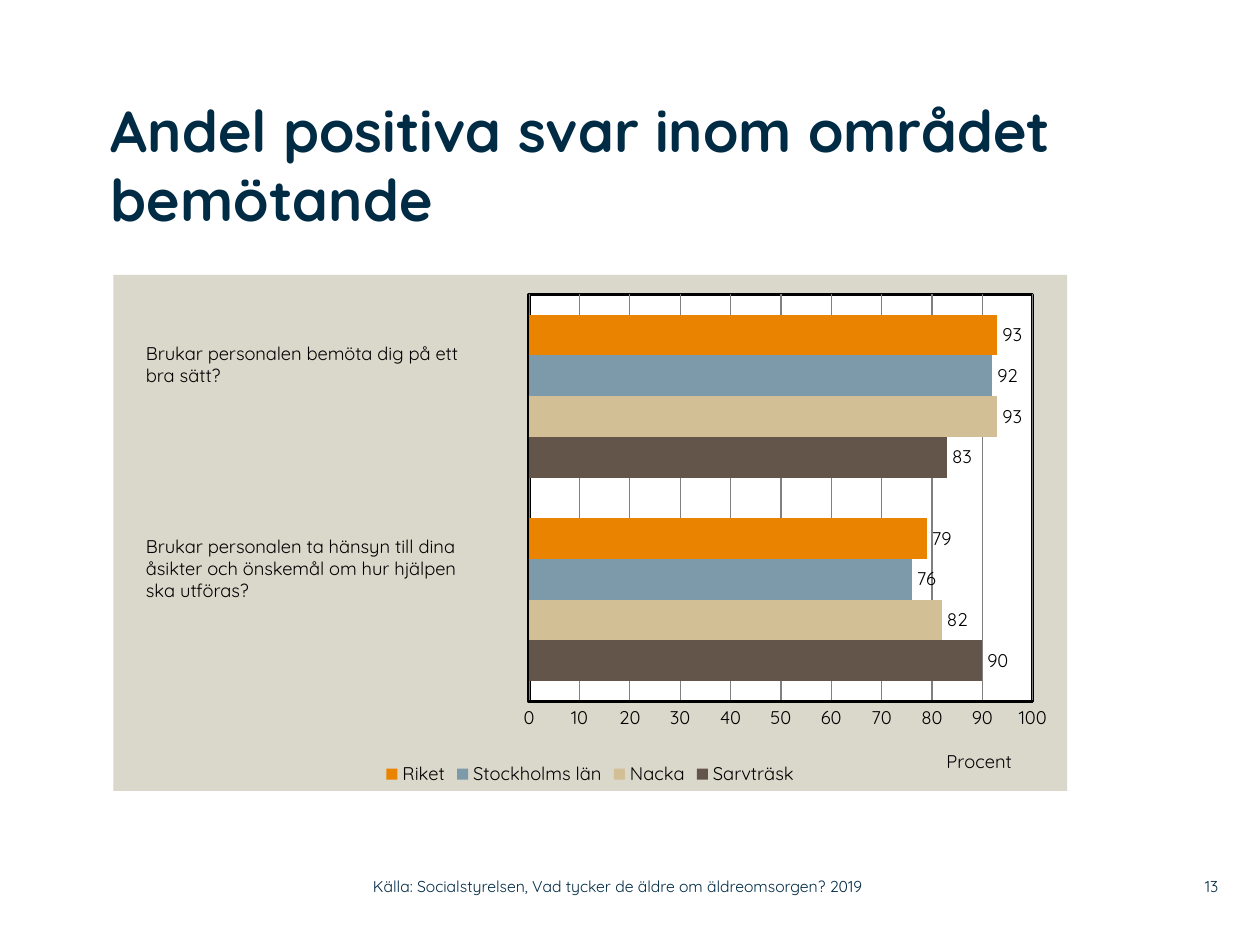
from pptx import Presentation
from pptx.chart.data import CategoryChartData
from pptx.dml.color import RGBColor
from pptx.enum.chart import XL_CHART_TYPE, XL_LABEL_POSITION, XL_LEGEND_POSITION, XL_TICK_MARK
from pptx.enum.text import MSO_ANCHOR, MSO_AUTO_SIZE, PP_ALIGN
from pptx.oxml import parse_xml
from pptx.oxml.ns import nsdecls, qn
from pptx.util import Pt

NAVY = RGBColor(0x00, 0x2B, 0x45)
BLACK = RGBColor(0, 0, 0)
GRAY = RGBColor(0x80, 0x80, 0x80)
BROWN = RGBColor(0x63, 0x55, 0x49)
SAND = RGBColor(0xD3, 0xBF, 0x96)
BLUE = RGBColor(0x7D, 0x9A, 0xAA)
ORANGE = RGBColor(0xE9, 0x83, 0x00)
FONT = "Quicksand"

prs = Presentation()
prs.slide_width, prs.slide_height = Pt(720), Pt(540)
slide = prs.slides.add_slide(prs.slide_layouts[6])


def add_text(text, left, top, width, height, size=10.5, color=BLACK, bold=False,
             align=PP_ALIGN.LEFT, anchor=MSO_ANCHOR.TOP, inset=(0, 0), grow=False):
    box = slide.shapes.add_textbox(Pt(left), Pt(top), Pt(width), Pt(height))
    frame = box.text_frame
    frame.word_wrap = True
    frame.auto_size = MSO_AUTO_SIZE.SHAPE_TO_FIT_TEXT if grow else MSO_AUTO_SIZE.NONE
    frame.vertical_anchor = anchor
    frame.margin_left = frame.margin_right = Pt(inset[0])
    frame.margin_top = frame.margin_bottom = Pt(inset[1])
    frame.text = text
    for para in frame.paragraphs:
        para.alignment = align
        font = para.font
        font.name, font.size, font.bold = FONT, Pt(size), bold
        font.color.rgb = color


def set_layout(parent, index, inner="", **values):
    for old in parent.findall(qn("c:layout")):
        parent.remove(old)
    parts = "".join(f'<c:{key} val="{val}"/>' for key, val in values.items())
    parent.insert(index, parse_xml(
        f'<c:layout {nsdecls("c")}><c:manualLayout>{inner}<c:xMode val="edge"/>'
        f'<c:yMode val="edge"/>{parts}</c:manualLayout></c:layout>'))


# Chart data, from the lowest bar up
rows = [
    ("Sarvträsk", (90, 83), BROWN),
    ("Nacka", (82, 93), SAND),
    ("Stockholms län", (76, 92), BLUE),
    ("Riket", (79, 93), ORANGE),
]
data = CategoryChartData()
data.categories = ["1", "2"]
for name, vals, _ in rows:
    data.add_series(name, vals)
chart = slide.shapes.add_chart(XL_CHART_TYPE.BAR_CLUSTERED, Pt(64.8), Pt(157),
                               Pt(545), Pt(295), data).chart
chart.has_title = False
chart.font.name, chart.font.size = FONT, Pt(10.5)
chart.font.color.rgb = BLACK

# Bars and their labels
plot = chart.plots[0]
plot.gap_width, plot.overlap = 100, 0
plot.vary_by_categories = False
for bars, (_, _, color) in zip(plot.series, rows):
    bars.format.fill.solid()
    bars.format.fill.fore_color.rgb = color
    labels = bars.data_labels
    labels.show_value = True
    labels.position = XL_LABEL_POSITION.OUTSIDE_END
    labels.font.name, labels.font.size = FONT, Pt(10.5)

# Axes
chart.category_axis.visible = False
axis = chart.value_axis
axis.minimum_scale, axis.maximum_scale, axis.major_unit = 0, 100, 10
axis.major_tick_mark = axis.minor_tick_mark = XL_TICK_MARK.NONE
axis.format.line.color.rgb = BLACK
axis.format.line.width = Pt(2)
axis.has_major_gridlines = True
axis.major_gridlines.format.line.color.rgb = GRAY
axis.major_gridlines.format.line.width = Pt(0.75)
title = axis.axis_title
title.text_frame.text = "Procent"
font = title.text_frame.paragraphs[0].runs[0].font
font.name, font.size, font.bold = FONT, Pt(10.5), False
font.color.rgb = BLACK
set_layout(title._element, 1, x=0.87, y=0.91)

# Legend
chart.has_legend = True
chart.legend.position = XL_LEGEND_POSITION.BOTTOM
chart.legend.include_in_layout = False
chart.legend.font.name, chart.legend.font.size = FONT, Pt(10.5)

# Plot frame and chart backdrop
root = chart.element.find(qn("c:chart"))
area = root.find(qn("c:plotArea"))
set_layout(area, 0, '<c:layoutTarget val="inner"/>', x=0.436, y=0.038, w=0.528, h=0.789)
fill = '<a:solidFill><a:srgbClr val="{}"/></a:solidFill>'
style = f'<c:spPr {nsdecls("c", "a")}>{fill}<a:ln{{}}</a:ln></c:spPr>'
area.append(parse_xml(style.format("FFFFFF", ' w="25400">' + fill.format("000000"))))
root.addnext(parse_xml(style.format("DAD7CB", "><a:noFill/>")))

# Title
add_text("Andel positiva svar inom området bemötande", 63.4, 54, 547, 102,
         size=33, color=NAVY, bold=True)

# Questions beside the bars
for text, top, height in [
    ("Brukar personalen bemöta dig på ett\nbra sätt?", 192.2, 32.4),
    ("Brukar personalen ta hänsyn till dina\nåsikter och önskemål om hur hjälpen\nska utföras?",
     302.4, 45.4),
]:
    add_text(text, 76.3, top, 215, height, inset=(7.2, 3.6), grow=True)

# Footer
for text, left, width, align in [
    ("13", 662.4, 33.8, PP_ALIGN.RIGHT),
    ("Källa: Socialstyrelsen, Vad tycker de äldre om äldreomsorgen? 2019", 213.1, 319, PP_ALIGN.LEFT),
]:
    add_text(text, left, 496, width, 21, size=9, color=NAVY, align=align,
             anchor=MSO_ANCHOR.MIDDLE)

prs.save("out.pptx")
